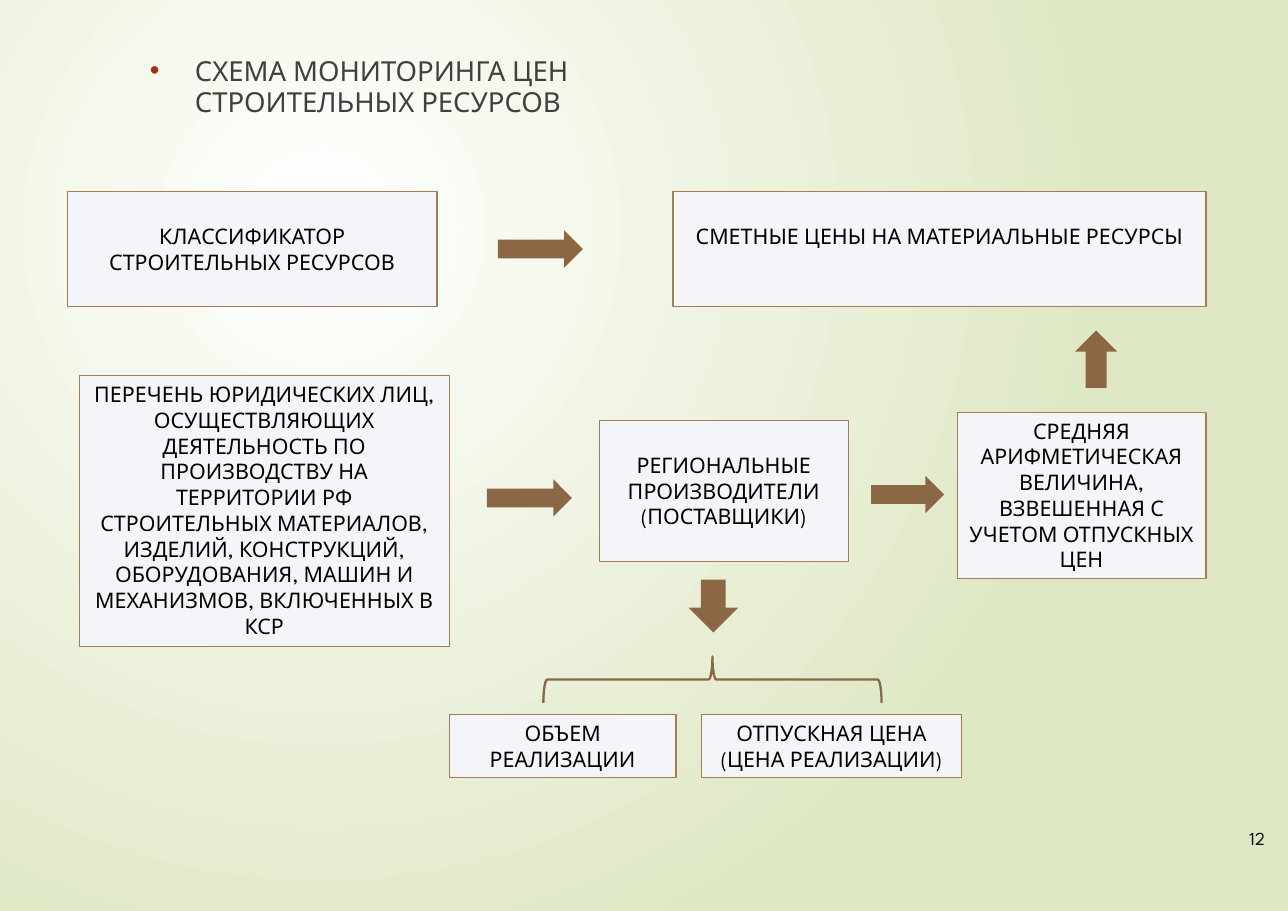
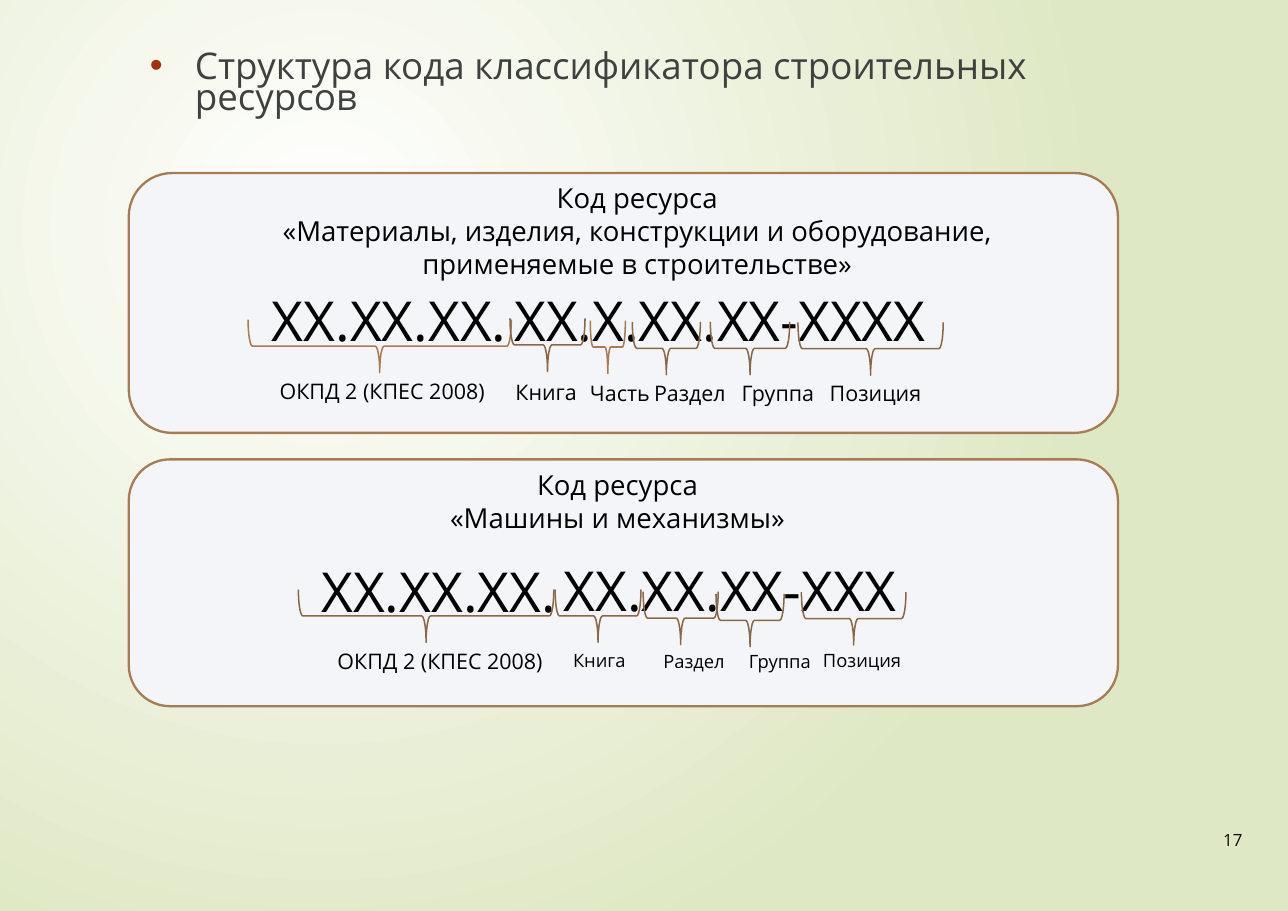
"""Builds two slides on price monitoring and the construction resource code."""
from lxml.etree import SubElement
from pptx import Presentation
from pptx.dml.color import RGBColor
from pptx.enum.shapes import MSO_SHAPE
from pptx.enum.text import MSO_ANCHOR, MSO_AUTO_SIZE, PP_ALIGN
from pptx.oxml.ns import qn
from pptx.util import Cm, Pt

WHITE = RGBColor(0xFF, 0xFF, 0xFF)
PALE_GREEN = RGBColor(0xDF, 0xE8, 0xC4)
PANEL = RGBColor(0xF4, 0xF5, 0xF9)
TAN = RGBColor(0xA7, 0x7B, 0x53)
BROWN = RGBColor(0x8C, 0x67, 0x46)
BULLET = RGBColor(0xA5, 0x30, 0x10)
HEADING = RGBColor(0x40, 0x40, 0x40)
NUMBER = RGBColor(0x0D, 0x0D, 0x0D)
BLACK = RGBColor(0, 0, 0)

SPARTAN = "League Spartan"
OPEN = "Open Sans"
BLANK_LINE_INSET = 0.72
BRACE_HEIGHT = 1.22

BOXES = [
    ("КЛАССИФИКАТОР СТРОИТЕЛЬНЫХ РЕСУРСОВ", (1.55, 4.42, 8.53, 2.64), BLANK_LINE_INSET),
    ("СМЕТНЫЕ ЦЕНЫ НА МАТЕРИАЛЬНЫЕ РЕСУРСЫ", (15.52, 4.42, 12.29, 2.64), BLANK_LINE_INSET),
    ("ПЕРЕЧЕНЬ ЮРИДИЧЕСКИХ ЛИЦ, ОСУЩЕСТВЛЯЮЩИХ ДЕЯТЕЛЬНОСТЬ ПО ПРОИЗВОДСТВУ "
     "НА ТЕРРИТОРИИ РФ СТРОИТЕЛЬНЫХ МАТЕРИАЛОВ, ИЗДЕЛИЙ, КОНСТРУКЦИЙ, "
     "ОБОРУДОВАНИЯ, МАШИН И МЕХАНИЗМОВ, ВКЛЮЧЕННЫХ В КСР",
     (1.83, 8.66, 8.53, 6.25), 0.13),
    ("РЕГИОНАЛЬНЫЕ ПРОИЗВОДИТЕЛИ (ПОСТАВЩИКИ)", (13.82, 9.7, 5.74, 3.25), BLANK_LINE_INSET),
    ("СРЕДНЯЯ АРИФМЕТИЧЕСКАЯ ВЕЛИЧИНА, ВЗВЕШЕННАЯ С УЧЕТОМ ОТПУСКНЫХ ЦЕН",
     (22.07, 9.5, 5.74, 3.84), 0.13),
    ("ОБЪЕМ РЕАЛИЗАЦИИ", (10.36, 16.48, 5.23, 1.45), 0.13),
    ("ОТПУСКНАЯ ЦЕНА (ЦЕНА РЕАЛИЗАЦИИ)", (16.18, 16.48, 5.99, 1.45), 0.13),
]

ARROWS = [
    (MSO_SHAPE.RIGHT_ARROW, (11.48, 5.31, 1.96, 0.86)),
    (MSO_SHAPE.RIGHT_ARROW, (11.23, 11.05, 1.96, 0.86)),
    (MSO_SHAPE.RIGHT_ARROW, (20.09, 10.97, 1.68, 0.86)),
    (MSO_SHAPE.DOWN_ARROW, (15.88, 13.36, 1.14, 1.22)),
    (MSO_SHAPE.UP_ARROW, (24.79, 7.62, 0.97, 1.32)),
]

MATERIAL_CODE = [("XX.XX.XX.", (6.02, 6.48, 6.71, 1.8)),
                 ("XX.X.XX.XX-XXXX", (11.61, 6.48, 11.4, 1.8))]
MATERIAL_PARTS = [
    ("ОКПД 2 (КПЕС 2008)", 14, (6.07, 8.59, 5.49), (5.72, 7.37, 6.07), TAN),
    ("Книга", 14, (11.58, 8.61, 2.03), (11.76, 7.34, 1.73), BROWN),
    ("Часть", 14, (13.28, 8.64, 2.03), (13.61, 7.39, 0.81), TAN),
    ("Раздел", 14, (14.78, 8.64, 2.26), (14.58, 7.42, 1.57), BROWN),
    ("Группа", 14, (16.81, 8.64, 2.26), (16.38, 7.42, 1.83), BROWN),
    ("Позиция", 14, (18.73, 8.64, 2.92), (18.4, 7.43, 3.35), BROWN),
]

MACHINE_CODE = [("XX.XX.XX.", (7.16, 12.73, 6.73, 1.8)),
                ("XX.XX.XX-XXX", (12.75, 12.7, 9.25, 1.8))]
MACHINE_PARTS = [
    ("ОКПД 2 (КПЕС 2008)", 14, (7.14, 14.81, 6.02), (6.88, 13.59, 5.89), BROWN),
    ("Книга", 12, (12.7, 14.83, 2.24), (12.8, 13.59, 1.98), BROWN),
    ("Раздел", 12, (14.76, 14.86, 2.49), (14.83, 13.64, 1.73), BROWN),
    ("Группа", 12, (16.74, 14.86, 2.49), (16.51, 13.69, 1.57), BROWN),
    ("Позиция", 12, (18.28, 14.83, 3.2), (18.48, 13.65, 2.41), BROWN),
]


def cm(*lengths):
    """Return the lengths as Cm values."""
    return [Cm(v) for v in lengths]


def style(p, size, font, colour=BLACK, align=PP_ALIGN.CENTER):
    """Format one paragraph."""
    p.alignment = align
    p.font.size = Pt(size)
    p.font.name = font
    p.font.color.rgb = colour


def set_background(master):
    """Give all slides the radial gradient from white to pale green."""
    fill = master.background.fill
    fill.gradient()
    for stop, colour in zip(fill.gradient_stops, (WHITE, PALE_GREEN)):
        stop.color.rgb = colour
    grad = master.element.find(".//" + qn("a:gradFill"))
    grad.remove(grad.find(qn("a:lin")))
    circle = SubElement(grad, qn("a:path"), path="circle")
    SubElement(circle, qn("a:fillToRect"), l="50000", t="50000", r="100000", b="100000")


def add_text(s, text, at, size, font, colour=BLACK, align=PP_ALIGN.CENTER):
    """Add a wrapped text box and return its text frame."""
    tf = s.shapes.add_textbox(*cm(*at)).text_frame
    tf.word_wrap = True
    tf.text = text
    for p in tf.paragraphs:
        style(p, size, font, colour, align)
    return tf


def add_heading(s, text, width, size, font):
    """Fill the title placeholder as a bulleted heading."""
    title = s.shapes.title
    title.left, title.top, title.width, title.height = cm(3.2, 1.17, width, 2.34)
    tf = title.text_frame
    tf.text = text
    tf.auto_size = MSO_AUTO_SIZE.NONE
    tf.vertical_anchor = MSO_ANCHOR.TOP
    p = tf.paragraphs[0]
    p.line_spacing = Pt(20)
    props = p._p.get_or_add_pPr()
    props.set("marL", str(Cm(1.04)))
    props.set("indent", str(-Cm(1.04)))
    SubElement(SubElement(props, qn("a:buClr")), qn("a:srgbClr"), val=str(BULLET))
    SubElement(props, qn("a:buFont"), typeface="Arial")
    SubElement(props, qn("a:buChar"), char="•")
    style(p, size, font, HEADING, PP_ALIGN.LEFT)


def add_number(s, text, right, size, font):
    """Add the slide number ending at the given right edge."""
    tf = add_text(s, text, (right - 1.24, 19, 1.24, 0.79), size, font, NUMBER, PP_ALIGN.RIGHT)
    tf.vertical_anchor = MSO_ANCHOR.MIDDLE
    tf.paragraphs[0].line_spacing = Pt(10.8)


def add_figure(s, kind, at, fill=None, line=None, weight=1.0):
    """Add a flat preset shape with an optional fill and outline."""
    sp = s.shapes.add_shape(kind, *cm(*at))
    sp.shadow.inherit = False
    if fill is None:
        sp.fill.background()
    else:
        sp.fill.solid()
        sp.fill.fore_color.rgb = fill
    if line is None:
        sp.line.fill.background()
    else:
        sp.line.color.rgb = line
        sp.line.width = Pt(weight)
    return sp


def add_box(s, text, at, inset):
    """Add a bordered box with text set from its top."""
    sp = add_figure(s, MSO_SHAPE.RECTANGLE, at, PANEL, TAN, 0.75)
    tf = sp.text_frame
    tf.word_wrap = True
    tf.vertical_anchor = MSO_ANCHOR.TOP
    tf.margin_top = Cm(inset)
    tf.text = text
    style(tf.paragraphs[0], 14, SPARTAN)


def add_brace(s, at, rotation, colour=BROWN, weight=1.0):
    """Add a horizontal brace that covers the given area once rotated."""
    left, top, width, height = at
    shift = (width - height) / 2
    upright = (left + shift, top - shift, height, width)
    add_figure(s, MSO_SHAPE.RIGHT_BRACE, upright, None, colour, weight).rotation = rotation


def add_code_card(s, top, height, caption, caption_at, code, parts):
    """Add a rounded card that explains the parts of a resource code."""
    add_figure(s, MSO_SHAPE.ROUNDED_RECTANGLE, (2.97, top, 22.81, height), PANEL, TAN, 1.5)
    add_text(s, caption, caption_at, 18, OPEN)
    for text, at in code:
        add_text(s, text, at, 36, OPEN, align=PP_ALIGN.LEFT)
    for label, size, label_at, brace_at, colour in parts:
        add_brace(s, (*brace_at, BRACE_HEIGHT), 90, colour)
        add_text(s, label, (*label_at, 0.86), size, OPEN)


def build_monitoring(s):
    """Build the price monitoring scheme."""
    add_heading(s, "СХЕМА МОНИТОРИНГА ЦЕН СТРОИТЕЛЬНЫХ РЕСУРСОВ", 13.97, 18, SPARTAN)
    add_brace(s, (12.53, 15.13, 7.8, 1.07), 270, weight=1.5)
    for text, at, inset in BOXES:
        add_box(s, text, at, inset)
    for kind, at in ARROWS:
        add_figure(s, kind, at, BROWN)
    add_number(s, "12", 29.42, 12, SPARTAN)


def build_code_structure(s):
    """Build the slide on the structure of the resource code."""
    add_heading(s, "Структура кода классификатора строительных ресурсов", 22.66, 24, OPEN)
    add_code_card(s, 3.99, 5.99,
                  "Код ресурса\n«Материалы, изделия, конструкции и оборудование, "
                  "применяемые в строительстве»",
                  (4.19, 4.04, 21.01, 2.57), MATERIAL_CODE, MATERIAL_PARTS)
    add_code_card(s, 10.59, 5.69, "Код ресурса\n«Машины и механизмы»",
                  (4.93, 10.67, 18.62, 1.8), MACHINE_CODE, MACHINE_PARTS)
    add_number(s, "17", 28.9, 11, OPEN)


def main():
    """Create and save the presentation."""
    prs = Presentation()
    prs.slide_width, prs.slide_height = cm(29.7, 21)
    set_background(prs.slide_master)
    title_only = prs.slide_layouts[5]
    for build in (build_monitoring, build_code_structure):
        build(prs.slides.add_slide(title_only))
    prs.save("out.pptx")


if __name__ == "__main__":
    main()
